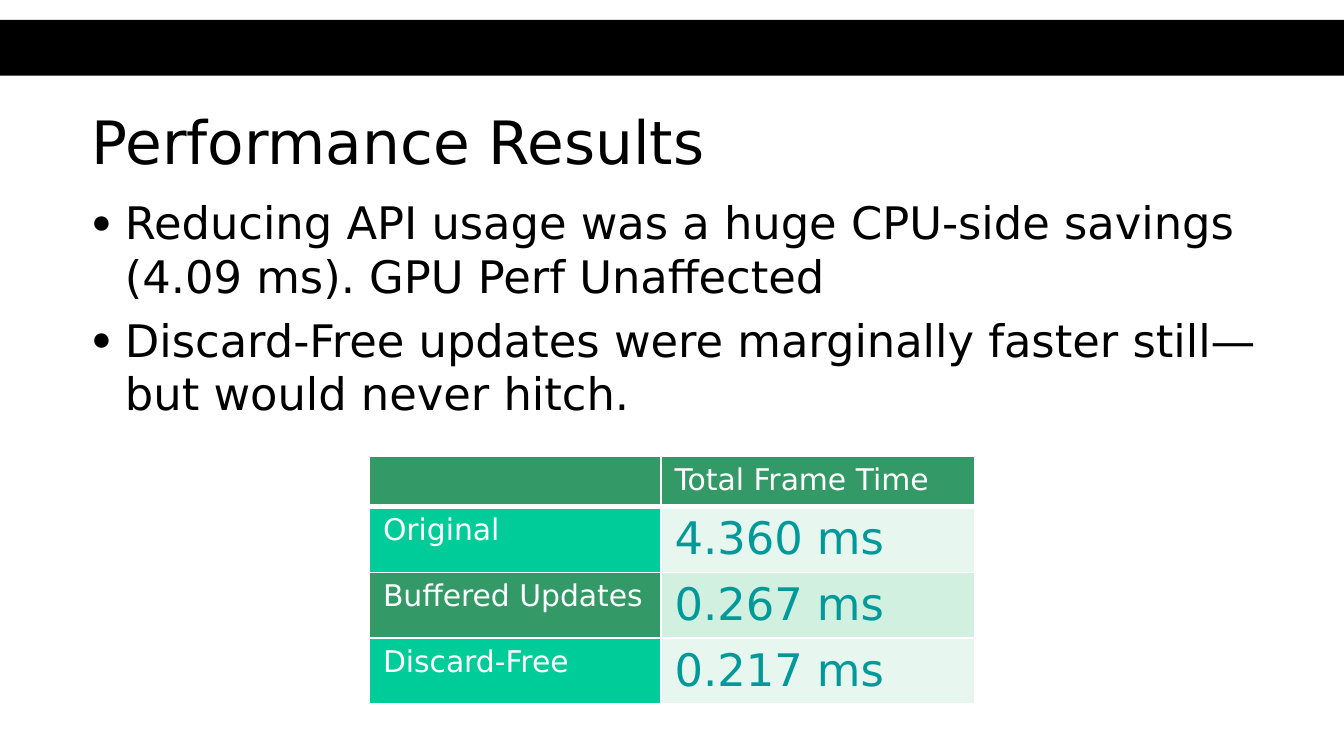
import pptx
import pptx.util
import pptx.dml.color
import pptx.enum.shapes
import pptx.enum.text
import pptx.oxml

HUES = {"ink": "000000", "paper": "FFFFFF", "head": "339966", "mint": "00CC99",
        "teal": "009999", "pale": "E7F6EF", "band": "D1F0E0"}
FACE = "DejaVu Sans"
NS = 'xmlns:a="http://schemas.openxmlformats.org/drawingml/2006/main"'
LEFT = pptx.enum.text.PP_ALIGN.LEFT
TOP = pptx.enum.text.MSO_ANCHOR.TOP

# Wide slide, 16 to 9
deck = pptx.Presentation()
deck.slide_width = wide = pptx.util.Inches(10)
deck.slide_height = high = wide * 9 // 16
unit = high / 100
slide = deck.slides.add_slide(deck.slide_layouts[1])


def tint(hue):
    return pptx.dml.color.RGBColor.from_string(HUES[hue])


def write(para, text, size, hue):
    para.alignment = LEFT
    run = para.add_run()
    run.text = text
    form = {"name": FACE, "size": pptx.util.Pt(size), "bold": False}
    for key, value in form.items():
        setattr(run.font, key, value)
    run.font.color.rgb = tint(hue)


# Black band across the top
band = slide.shapes.add_shape(pptx.enum.shapes.MSO_SHAPE.RECTANGLE,
                              0, int(unit * 2.62), wide, int(unit * 7.4))
band.shadow.inherit = False
band.fill.solid()
band.fill.fore_color.rgb = tint("ink")
band.line.fill.background()

# Title and body placeholders, as shares of the slide
title, body = slide.shapes.title, slide.placeholders[1]
places = [(title, 12.95, 0.883, 11.9), (body, 24.85, 0.9, 66.67)]
for holder, top, width, height in places:
    spot = {"left": wide * 0.058, "top": unit * top,
            "width": wide * width, "height": unit * height}
    for key, value in spot.items():
        setattr(holder, key, int(value))
    form = {"word_wrap": True, "vertical_anchor": TOP,
            "auto_size": pptx.enum.text.MSO_AUTO_SIZE.NONE}
    for key, value in form.items():
        setattr(holder.text_frame, key, value)
write(title.text_frame.paragraphs[0], "Performance Results", 32, "ink")

# Bulleted list
points = ["Reducing API usage was a huge CPU-side savings (4.09 ms). GPU Perf Unaffected",
          "Discard-Free updates were marginally faster still—but would never hitch."]
for i, point in enumerate(points):
    para = body.text_frame.add_paragraph() if i else body.text_frame.paragraphs[0]
    props = para._p.get_or_add_pPr()
    dent = pptx.util.Inches(0.25)
    props.set("marL", str(dent))
    props.set("indent", str(-dent))
    for mark in (f'<a:buClr {NS}><a:srgbClr val="{HUES["ink"]}"/></a:buClr>',
                 f'<a:buSzPct {NS} val="75000"/>',
                 f'<a:buChar {NS} char="●"/>'):
        props.append(pptx.oxml.parse_xml(mark))
    para.space_before = pptx.util.Pt(5.5 if i else 0)
    write(para, point, 24, "ink")

# Table of frame times
rows = [("", "Total Frame Time"), ("Original", "4.360 ms"),
        ("Buffered Updates", "0.267 ms"), ("Discard-Free", "0.217 ms")]
fills = [("head", "head"), ("mint", "pale"), ("head", "band"), ("mint", "pale")]
frame = slide.shapes.add_table(len(rows), 2, int(wide * 0.275), int(unit * 60.4),
                               int(wide * 0.45), int(unit * 32.2))
table = frame.table
for col, share in zip(table.columns, (0.217, 0.233)):
    col.width = int(wide * share)
for r, texts in enumerate(rows):
    table.rows[r].height = pptx.util.Inches(0.49 if r else 0.34)
    for c, text in enumerate(texts):
        cell = table.cell(r, c)
        cell.vertical_anchor = TOP
        props = cell._tc.get_or_add_tcPr()
        # White rules, thicker below the header
        for side in "LRTB":
            thick = 3 if (r, side) in ((0, "B"), (1, "T")) else 1
            props.append(pptx.oxml.parse_xml(
                f'<a:ln{side} {NS} w="{pptx.util.Pt(thick)}"><a:solidFill>'
                f'<a:srgbClr val="{HUES["paper"]}"/></a:solidFill></a:ln{side}>'))
        cell.fill.solid()
        cell.fill.fore_color.rgb = tint(fills[r][c])
        para = cell.text_frame.paragraphs[0]
        if text:
            size, hue = (24, "teal") if r and c else (16, "paper")
            write(para, text, size, hue)
        else:
            para._p.append(pptx.oxml.parse_xml(f'<a:endParaRPr {NS} sz="1600"/>'))

deck.save("out.pptx")
